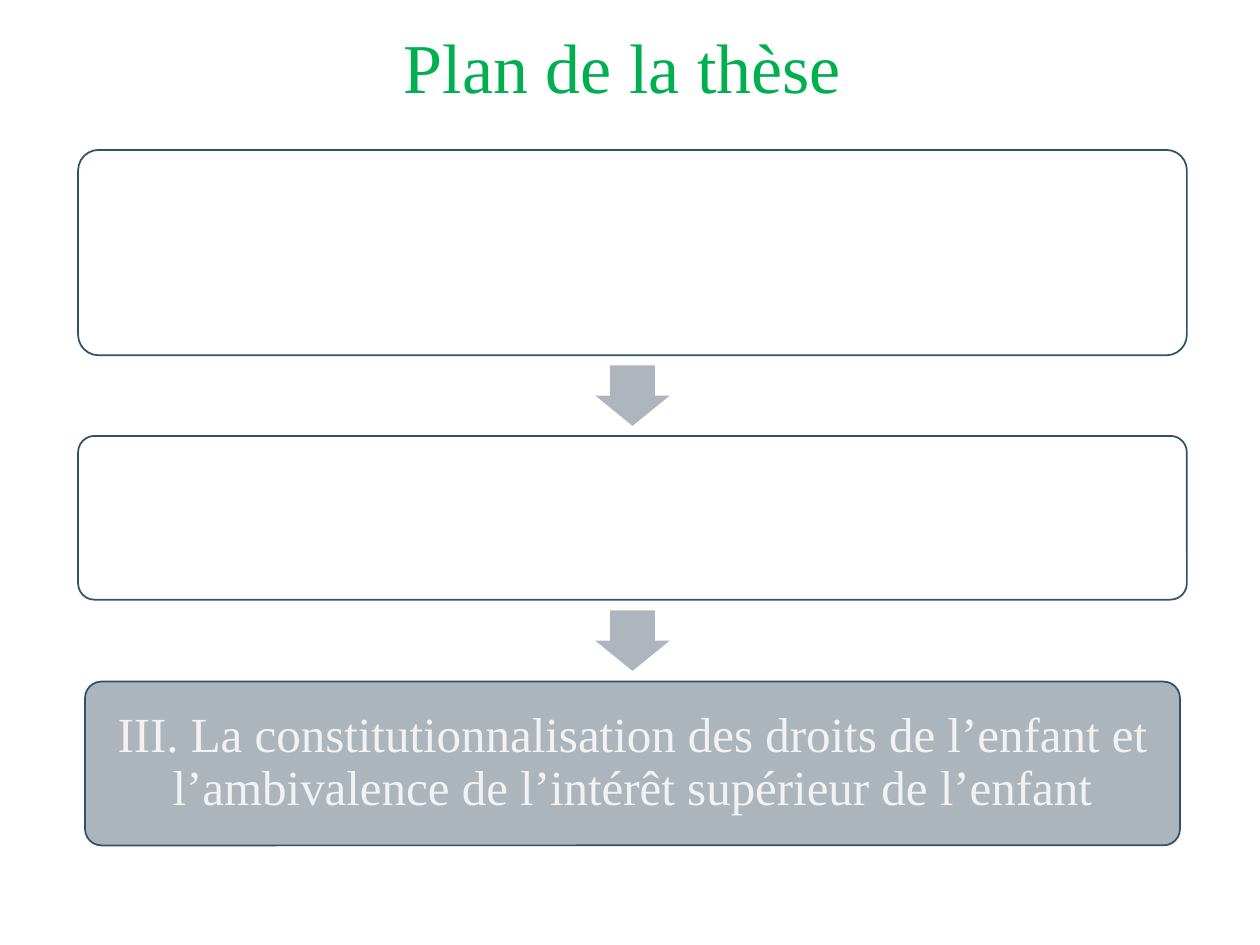
import pptx
import pptx.dml.color
import pptx.enum.shapes
import pptx.enum.text
import pptx.util
from dataclasses import dataclass
from itertools import pairwise

Inches, Pt = pptx.util.Inches, pptx.util.Pt
RGBColor = pptx.dml.color.RGBColor
MSO_SHAPE = pptx.enum.shapes.MSO_SHAPE
PP_ALIGN = pptx.enum.text.PP_ALIGN
MSO_ANCHOR = pptx.enum.text.MSO_ANCHOR

GREEN = RGBColor(0x00, 0xB0, 0x50)
NAVY = RGBColor(0x2E, 0x53, 0x69)
GREY = RGBColor(0xAD, 0xB5, 0xBC)
ARROW_GREY = RGBColor(0xAE, 0xB5, 0xBC)
WHITE = RGBColor(0xFF, 0xFF, 0xFF)
OFF_WHITE = RGBColor(0xF2, 0xF2, 0xF2)

FONT = "Times New Roman"
CENTER_X = 5.02
ARROW_LENGTH, ARROW_WIDTH = 0.48, 0.59


@dataclass
class Step:
    top: float
    width: float
    height: float
    fill: RGBColor
    text: str = ""


STEPS = [
    Step(1.19, 8.8, 1.63, WHITE),
    Step(3.46, 8.8, 1.3, WHITE),
    Step(5.41, 8.69, 1.3, GREY,
         "III. La constitutionnalisation des droits de l’enfant et "
         "l’ambivalence de l’intérêt supérieur de l’enfant"),
]


def write_text(sp, text: str, size: int, color: RGBColor) -> None:
    tf = sp.text_frame
    tf.word_wrap = True
    tf.auto_size = pptx.enum.text.MSO_AUTO_SIZE.NONE
    tf.vertical_anchor = MSO_ANCHOR.MIDDLE
    p = tf.paragraphs[0]
    p.alignment = PP_ALIGN.CENTER
    p.line_spacing = 0.9
    r = p.add_run()
    r.text = text
    r.font.name = FONT
    r.font.size = Pt(size)
    r.font.color.rgb = color


def add_step(s, step: Step) -> None:
    sp = s.shapes.add_shape(
        MSO_SHAPE.ROUNDED_RECTANGLE,
        Inches(CENTER_X - step.width / 2), Inches(step.top),
        Inches(step.width), Inches(step.height))
    sp.adjustments[0] = 0.1
    sp.shadow.inherit = False
    sp.fill.solid()
    sp.fill.fore_color.rgb = step.fill
    sp.line.color.rgb = NAVY
    sp.line.width = Pt(1)
    if step.text:
        tf = sp.text_frame
        tf.margin_left = tf.margin_right = Inches(0.12)
        tf.margin_top = tf.margin_bottom = Inches(0.12)
        write_text(sp, step.text, 28, OFF_WHITE)


def add_arrow(s, above: Step, below: Step) -> None:
    """Point down, centred in the gap between two steps."""
    center_y = (above.top + above.height + below.top) / 2
    sp = s.shapes.add_shape(
        MSO_SHAPE.RIGHT_ARROW,
        Inches(CENTER_X - ARROW_LENGTH / 2), Inches(center_y - ARROW_WIDTH / 2),
        Inches(ARROW_LENGTH), Inches(ARROW_WIDTH))
    sp.rotation = 90
    sp.adjustments[0] = 0.6
    sp.adjustments[1] = 0.5
    sp.shadow.inherit = False
    sp.fill.solid()
    sp.fill.fore_color.rgb = ARROW_GREY
    sp.line.fill.background()


def main() -> None:
    prs = pptx.Presentation()
    prs.slide_width, prs.slide_height = Inches(10), Inches(7.5)
    s = prs.slides.add_slide(prs.slide_layouts[5])

    # Title
    title = s.shapes.title
    title.left, title.top = Inches(0.63), Inches(-0.16)
    title.width, title.height = Inches(8.62), Inches(1.45)
    write_text(title, "Plan de la thèse", 40, GREEN)

    # Steps of the plan, joined by arrows
    for step in STEPS:
        add_step(s, step)
    for above, below in pairwise(STEPS):
        add_arrow(s, above, below)

    prs.save("out.pptx")


if __name__ == "__main__":
    main()
